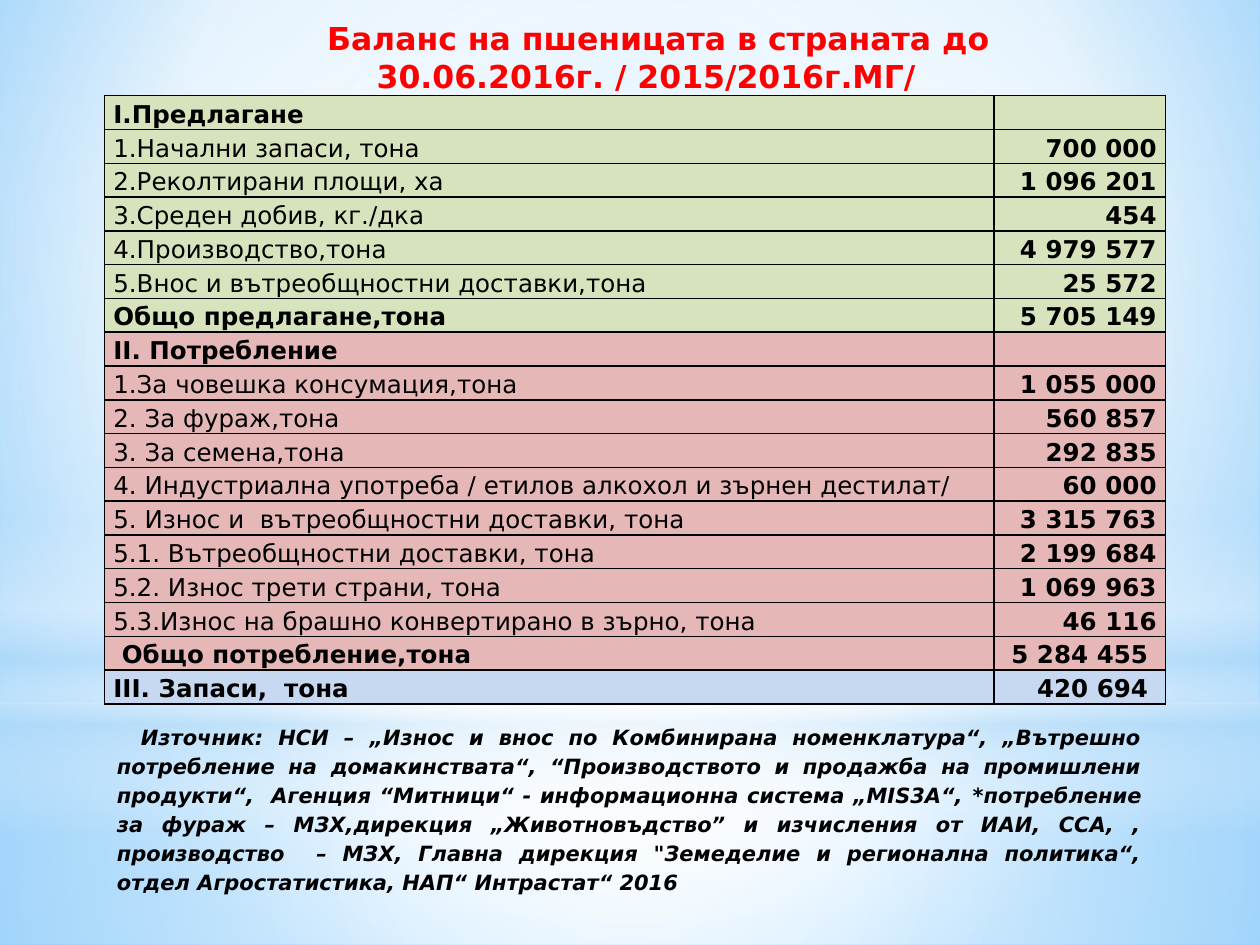
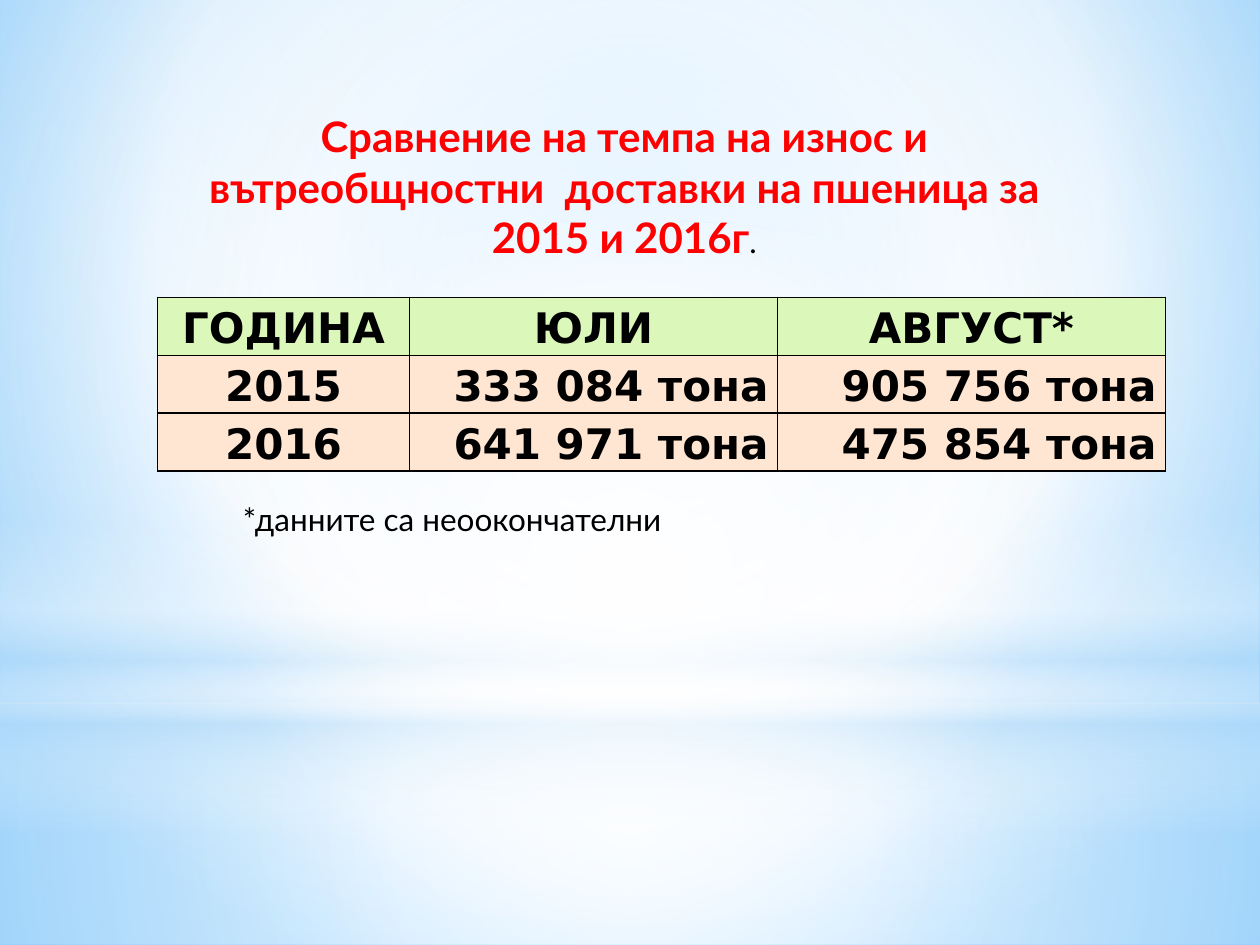
from dataclasses import dataclass

from lxml.etree import SubElement
from pptx import Presentation
from pptx.dml.color import RGBColor
from pptx.enum.shapes import MSO_SHAPE
from pptx.enum.text import MSO_ANCHOR, MSO_AUTO_SIZE, PP_ALIGN
from pptx.oxml import parse_xml
from pptx.oxml.ns import nsdecls, qn
from pptx.util import Inches, Pt


@dataclass(frozen=True)
class Theme:
    heading_font: str = "DejaVu Sans"
    text_font: str = "Lato"
    red: str = "FF0000"
    black: str = "000000"
    white: str = "FFFFFF"
    haze: str = "B4DCFA"
    sky: str = "9ED5FF"
    deep_sky: str = "5BB9FF"
    supply: str = "D6E3BC"
    consumption: str = "E5B8B7"
    stocks: str = "C6D9F1"
    month_header: str = "DCF7BA"
    month_row: str = "FFE6D3"
    large: int = 24
    medium: int = 18
    table: int = 14
    small: int = 12
    spacing: float = 1.15
    indent: float = 0.19


THEME = Theme()

SUPPLY = [
    ("I.Предлагане", ""),
    ("1.Начални запаси, тона", "700 000"),
    ("2.Реколтирани площи, ха", "1 096 201"),
    ("3.Среден добив, кг./дка", "454"),
    ("4.Производство,тона", "4 979 577"),
    ("5.Внос и вътреобщностни доставки,тона", "25 572"),
    ("Общо предлагане,тона", "5 705 149"),
]
CONSUMPTION = [
    ("II. Потребление", ""),
    ("1.За човешка консумация,тона", "1 055 000"),
    ("2. За фураж,тона", "560 857"),
    ("3. За семена,тона", "292 835"),
    ("4. Индустриална употреба / етилов алкохол и зърнен дестилат/", "60 000"),
    ("5. Износ и  вътреобщностни доставки, тона", "3 315 763"),
    ("5.1. Вътреобщностни доставки, тона", "2 199 684"),
    ("5.2. Износ трети страни, тона", "1 069 963"),
    ("5.3.Износ на брашно конвертирано в зърно, тона", "46 116"),
    (" Общо потребление,тона", "5 284 455 "),
]
STOCKS = [("III. Запаси,  тона", "420 694 ")]

MONTHS = [
    ("ГОДИНА", "ЮЛИ", "АВГУСТ*"),
    ("2015", "333 084 тона", "905 756 тона"),
    ("2016", "641 971 тона", "475 854 тона"),
]

SOURCE_START = (
    "Източник: НСИ – „Износ и внос по Комбинирана номенклатура“, "
    "„Вътрешно потребление на домакинствата“, “Производството и продажба "
    "на промишлени продукти“,  Агенция “Митници“ - информационна система „MIS3A“,"
)
SOURCE_END = (
    "потребление за фураж – МЗХ,дирекция „Животновъдство” и изчисления от "
    "ИАИ, ССА, , производство  – МЗХ, Главна дирекция \"Земеделие и "
    "регионална политика“, отдел Агростатистика, НАП“ Интрастат“ 2016"
)


def paint_gradient(fill, properties, stops, focus=None):
    fill.gradient()
    stop_xml = "".join(
        f'<a:gs pos="{position * 1000}"><a:srgbClr val="{color}">'
        f'<a:alpha val="{opacity * 1000}"/></a:srgbClr></a:gs>'
        for position, color, opacity in stops
    )
    if focus:
        left, top, right, bottom = (value * 1000 for value in focus)
        direction = (
            f'<a:path path="circle"><a:fillToRect l="{left}" t="{top}" '
            f'r="{right}" b="{bottom}"/></a:path>'
        )
    else:
        direction = '<a:lin ang="5400000" scaled="0"/>'
    gradient = parse_xml(
        f'<a:gradFill {nsdecls("a")} rotWithShape="1">'
        f"<a:gsLst>{stop_xml}</a:gsLst>{direction}</a:gradFill>"
    )
    properties.replace(properties.find(qn("a:gradFill")), gradient)


def decorate_master(presentation, slide):
    white, haze = THEME.white, THEME.haze
    master = presentation.slide_master
    background_fill = master.background.fill
    background_fill.solid()
    paint_gradient(
        background_fill,
        master.element.find(".//" + qn("p:bgPr")),
        [(0, THEME.sky, 100), (60, white, 100), (100, THEME.deep_sky, 100)],
        (20, 10, 20, 60),
    )
    center = (50, 50, 50, 50)
    bands = [
        (MSO_SHAPE.RECTANGLE, 5.58, 1.92, center,
         [(0, white, 91), (37, white, 76), (100, haze, 79)]),
        (MSO_SHAPE.RECTANGLE, 0, 5.58, center,
         [(0, white, 89), (48, white, 62), (100, haze, 79)]),
        (MSO_SHAPE.RECTANGLE, 4.12, 2.5, None,
         [(0, white, 0), (29, white, 30), (45, haze, 40),
          (55, white, 26), (65, haze, 60), (100, white, 0)]),
        (MSO_SHAPE.OVAL, 1.75, 5.58, center,
         [(0, white, 100), (56, white, 0)]),
    ]
    for index, (kind, top, height, focus, stops) in enumerate(bands):
        shape = slide.shapes.add_shape(
            kind, 0, Inches(top), presentation.slide_width, Inches(height)
        )
        shape.shadow.inherit = False
        shape.line.fill.background()
        paint_gradient(shape.fill, shape.element.spPr, stops, focus)
        shape.element.nvSpPr.cNvPr.id = 20 + index
        master.shapes.element.insert(2 + index, shape.element)


def format_run(run, size, font, color=THEME.black, bold=False, italic=False):
    run.font.size = Pt(size)
    run.font.name = font
    run.font.color.rgb = RGBColor.from_string(color)
    run.font.bold = bold
    run.font.italic = italic


def place_text(shape, box, text, alignment, indent=0):
    shape.left, shape.top, shape.width, shape.height = map(Inches, box)
    frame = shape.text_frame
    frame.word_wrap = True
    frame.auto_size = MSO_AUTO_SIZE.NONE
    frame.vertical_anchor = MSO_ANCHOR.TOP
    frame.text = text
    paragraph = frame.paragraphs[0]
    paragraph.alignment = alignment
    if indent:
        paragraph._p.get_or_add_pPr().set("indent", str(Inches(indent)))
    return paragraph


def add_title(slide, box, text, size, font, indent=0):
    paragraph = place_text(slide.shapes.title, box, text, PP_ALIGN.CENTER, indent)
    format_run(paragraph.runs[0], size, font, THEME.red, bold=True)
    return paragraph


def add_text(slide, box, text, alignment, indent=0):
    shape = slide.shapes.add_textbox(0, 0, 0, 0)
    return place_text(shape, box, text, alignment, indent)


def border_cell(cell):
    properties = cell._tc.get_or_add_tcPr()
    for index, side in enumerate(("lnL", "lnR", "lnT", "lnB")):
        border = parse_xml(
            f'<a:{side} {nsdecls("a")} w="12700"><a:solidFill>'
            f'<a:srgbClr val="{THEME.black}"/></a:solidFill></a:{side}>'
        )
        properties.insert(index, border)


def fill_cell(cell, text, color, size, alignment, anchor, bold):
    cell.fill.solid()
    cell.fill.fore_color.rgb = RGBColor.from_string(color)
    border_cell(cell)
    cell.margin_left = cell.margin_right = Inches(0.07)
    cell.margin_top = cell.margin_bottom = 0
    cell.vertical_anchor = anchor
    paragraph = cell.text_frame.paragraphs[0]
    paragraph.alignment = alignment
    paragraph.line_spacing = THEME.spacing
    if text:
        paragraph.text = text
        format_run(paragraph.runs[0], size, THEME.heading_font, bold=bold)
    else:
        SubElement(paragraph._p, qn("a:endParaRPr")).set("sz", str(size * 100))


def add_plain_table(slide, left, top, height, widths, row_count):
    table = slide.shapes.add_table(
        row_count, len(widths), Inches(left), Inches(top),
        Inches(sum(widths)), Inches(height),
    ).table
    table.first_row = table.horz_banding = False
    for column, width in zip(table.columns, widths):
        column.width = Inches(width)
    return table


def add_balance_table(slide):
    sections = [
        (SUPPLY, THEME.supply),
        (CONSUMPTION, THEME.consumption),
        (STOCKS, THEME.stocks),
    ]
    rows = [
        (label, value, color, position in (0, len(section) - 1))
        for section, color in sections
        for position, (label, value) in enumerate(section)
    ]
    table = add_plain_table(slide, 0.83, 0.76, 4.83, (7.06, 1.36), len(rows))
    for index, (label, value, color, emphasized) in enumerate(rows):
        fill_cell(table.cell(index, 0), label, color, THEME.table,
                  PP_ALIGN.LEFT, MSO_ANCHOR.MIDDLE, emphasized)
        fill_cell(table.cell(index, 1), value, color, THEME.table,
                  PP_ALIGN.RIGHT, MSO_ANCHOR.MIDDLE, True)


def add_month_table(slide):
    table = add_plain_table(slide, 1.25, 2.36, 1.38, (2, 2.92, 3.08), len(MONTHS))
    for row, values in enumerate(MONTHS):
        for column, value in enumerate(values):
            color = THEME.month_row if row else THEME.month_header
            alignment = PP_ALIGN.RIGHT if row and column else PP_ALIGN.CENTER
            fill_cell(table.cell(row, column), value, color, THEME.large,
                      alignment, MSO_ANCHOR.TOP, True)


def build_balance_slide(slide):
    add_balance_table(slide)
    add_title(slide, (1.92, 0.1, 6.42, 0.69),
              "Баланс на пшеницата в страната до 30.06.2016г. / 2015/2016г.МГ/",
              THEME.medium, THEME.heading_font, THEME.indent)
    source = add_text(slide, (0.83, 5.67, 8.33, 1.6), SOURCE_START,
                      PP_ALIGN.JUSTIFY, THEME.indent)
    source.line_spacing = THEME.spacing
    for text in (" *", SOURCE_END):
        source.add_run().text = text
    for run in source.runs:
        format_run(run, THEME.small, THEME.heading_font,
                   bold=True, italic=run.text != " *")


def build_comparison_slide(slide):
    title = add_title(
        slide, (1.33, 0.83, 7.25, 1.31),
        "Сравнение на темпа на износ и вътреобщностни  доставки на пшеница "
        "за 2015 и 2016г",
        THEME.large, THEME.text_font)
    period = title.add_run()
    period.text = "."
    format_run(period, THEME.medium, THEME.text_font)
    add_month_table(slide)
    note = add_text(slide, (1.83, 3.92, 6, 0.4),
                    "*данните са неоокончателни", PP_ALIGN.LEFT)
    format_run(note.runs[0], THEME.medium, THEME.text_font)


def main():
    presentation = Presentation()
    presentation.slide_width = Inches(10)
    presentation.slide_height = Inches(7.5)
    title_only = presentation.slide_layouts[5]
    balance_slide = presentation.slides.add_slide(title_only)
    comparison_slide = presentation.slides.add_slide(title_only)
    decorate_master(presentation, balance_slide)
    build_balance_slide(balance_slide)
    build_comparison_slide(comparison_slide)
    presentation.save("out.pptx")


if __name__ == "__main__":
    main()
